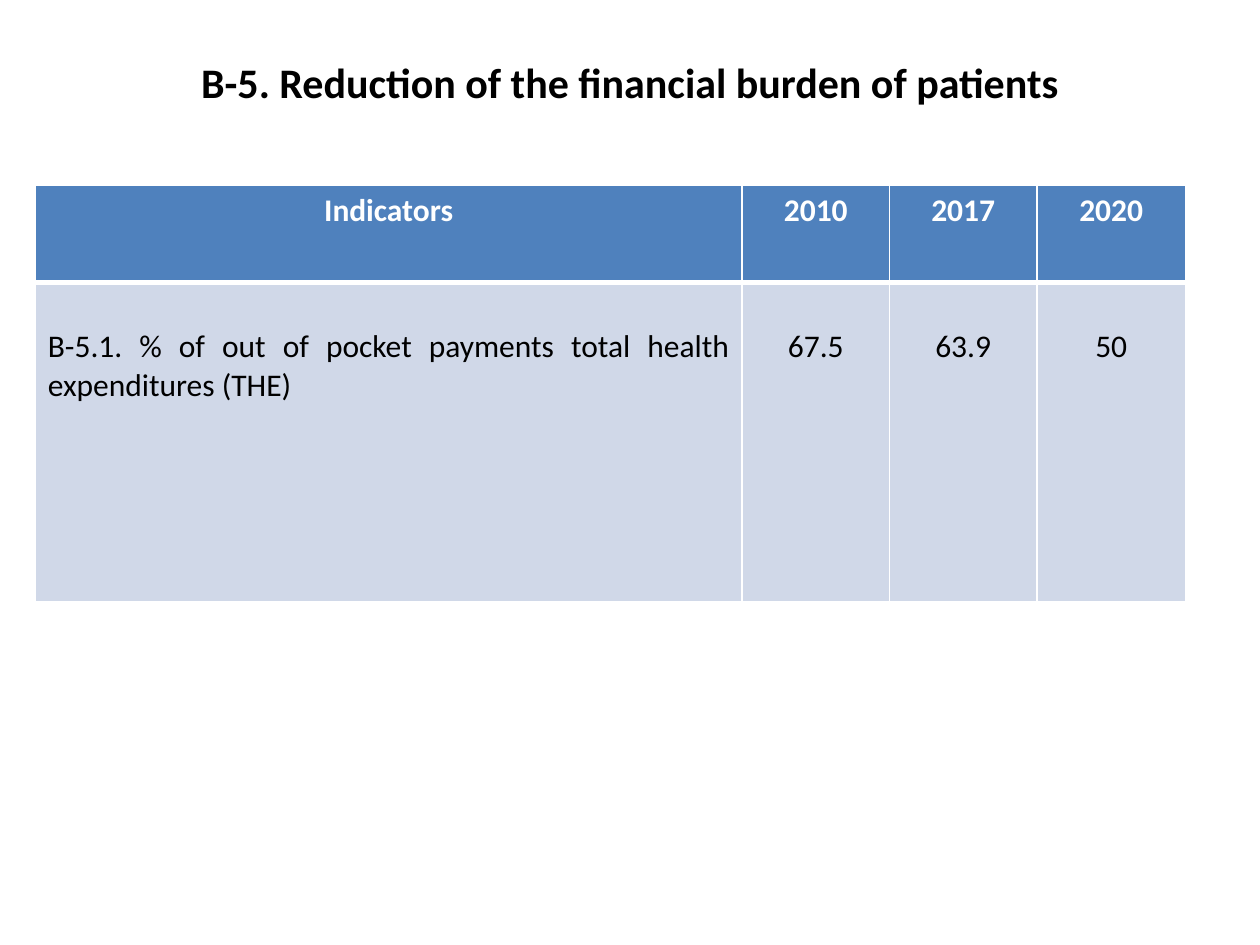
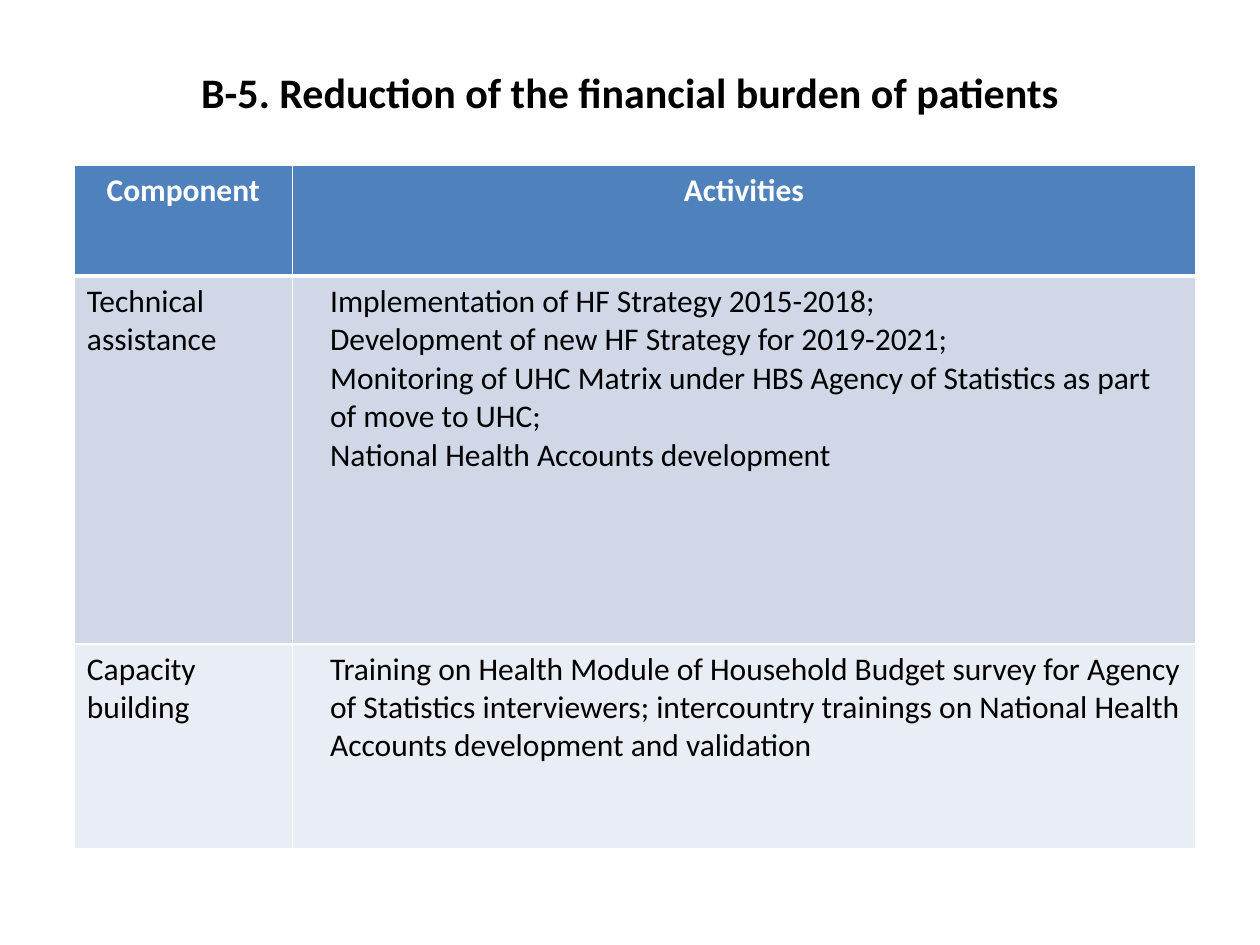
from dataclasses import dataclass

from lxml import etree
from pptx import Presentation
from pptx.dml.color import RGBColor
from pptx.enum.text import MSO_ANCHOR, PP_ALIGN
from pptx.oxml.ns import qn
from pptx.util import Inches, Pt

LEFT, MID, JUST = PP_ALIGN.LEFT, PP_ALIGN.CENTER, PP_ALIGN.JUSTIFY
MIDDLE = MSO_ANCHOR.MIDDLE
FONT = "Calibri"
BLACK, WHITE, BLUE = "000000", "FFFFFF", "4F81BD"
BANDS = ("D0D8E8", "E9EDF4")
THIN, THICK = 1, 3
TITLE = "В-5. Reduction of the financial burden of patients"


@dataclass
class Column:
    head: str
    width: float
    align: PP_ALIGN = LEFT
    inset: float = 0.1


@dataclass
class Page:
    title_height: float
    left: float
    top: float
    columns: list[Column]
    heights: list[float]
    rows: list[list[list[str]]]
    body_top: float = 0.05


PAGES = [
    Page(
        0.69, 0.28, 1.47,
        [
            Column("Indicators", 5.61, JUST),
            Column("2010", 1.17, MID),
            Column("2017", 1.17, MID),
            Column("2020", 1.18, MID),
        ],
        [0.77, 2.54],
        [[
            ["В-5.1. % of out of pocket payments total health expenditures (THE)"],
            ["67.5"], ["63.9"], ["50"],
        ]],
        0.36,
    ),
    Page(
        0.85, 0.59, 1.31,
        [Column("Component", 1.73), Column("Activities", 7.17, LEFT, 0.3)],
        [0.88, 2.92, 1.63],
        [
            [["Technical assistance"], [
                "Implementation of HF Strategy 2015-2018;",
                "Development of new HF Strategy for 2019-2021;",
                "Monitoring of UHC Matrix under HBS Agency of Statistics as part of move to UHC;",
                "National Health Accounts development",
            ]],
            [["Capacity building"], [
                "Training on Health Module of Household Budget survey for Agency of "
                "Statistics interviewers; intercountry trainings on National Health "
                "Accounts development and validation",
            ]],
        ],
    ),
]


def color(code: str) -> RGBColor:
    return RGBColor.from_string(code)


def write(frame, lines: list[str], size: int, tint: str, bold: bool, align: PP_ALIGN) -> None:
    frame.word_wrap = True
    for i, line in enumerate(lines):
        para = frame.add_paragraph() if i else frame.paragraphs[0]
        para.alignment = align
        run = para.add_run()
        run.text = line
        run.font.name = FONT
        run.font.size = Pt(size)
        run.font.bold = bold
        run.font.color.rgb = color(tint)


def border(cell, top: int, bottom: int) -> None:
    props = cell._tc.get_or_add_tcPr()
    for side, width in (("L", THIN), ("R", THIN), ("T", top), ("B", bottom)):
        line = etree.SubElement(props, qn(f"a:ln{side}"), w=str(Pt(width)))
        fill = etree.SubElement(line, qn("a:solidFill"))
        etree.SubElement(fill, qn("a:srgbClr"), val=WHITE)


def paint(cell, code: str, top: int, bottom: int) -> None:
    border(cell, top, bottom)
    cell.fill.solid()
    cell.fill.fore_color.rgb = color(code)


def add_title(slide, height: float) -> None:
    box = slide.shapes.add_textbox(Inches(0.5), Inches(0.3), Inches(9), Inches(height))
    box.text_frame.vertical_anchor = MIDDLE
    write(box.text_frame, [TITLE], 24, BLACK, True, MID)


def add_grid(slide, page: Page) -> None:
    width = sum(col.width for col in page.columns)
    table = slide.shapes.add_table(
        len(page.heights), len(page.columns), Inches(page.left), Inches(page.top),
        Inches(width), Inches(sum(page.heights)),
    ).table
    for row, height in zip(table.rows, page.heights):
        row.height = Inches(height)
    for c, col in enumerate(page.columns):
        table.columns[c].width = Inches(col.width)
        head = table.cell(0, c)
        paint(head, BLUE, THIN, THICK)
        write(head.text_frame, [col.head], 18, WHITE, True, MID)
        for r, row in enumerate(page.rows):
            cell = table.cell(r + 1, c)
            paint(cell, BANDS[r % 2], THIN if r else THICK, THIN)
            cell.margin_left = Inches(col.inset)
            cell.margin_top = Inches(page.body_top)
            write(cell.text_frame, row[c], 18, BLACK, False, col.align)


def main() -> None:
    deck = Presentation()
    deck.slide_width, deck.slide_height = Inches(10), Inches(7.5)
    for page in PAGES:
        slide = deck.slides.add_slide(deck.slide_layouts[6])
        add_title(slide, page.title_height)
        add_grid(slide, page)
    deck.save("out.pptx")


if __name__ == "__main__":
    main()
